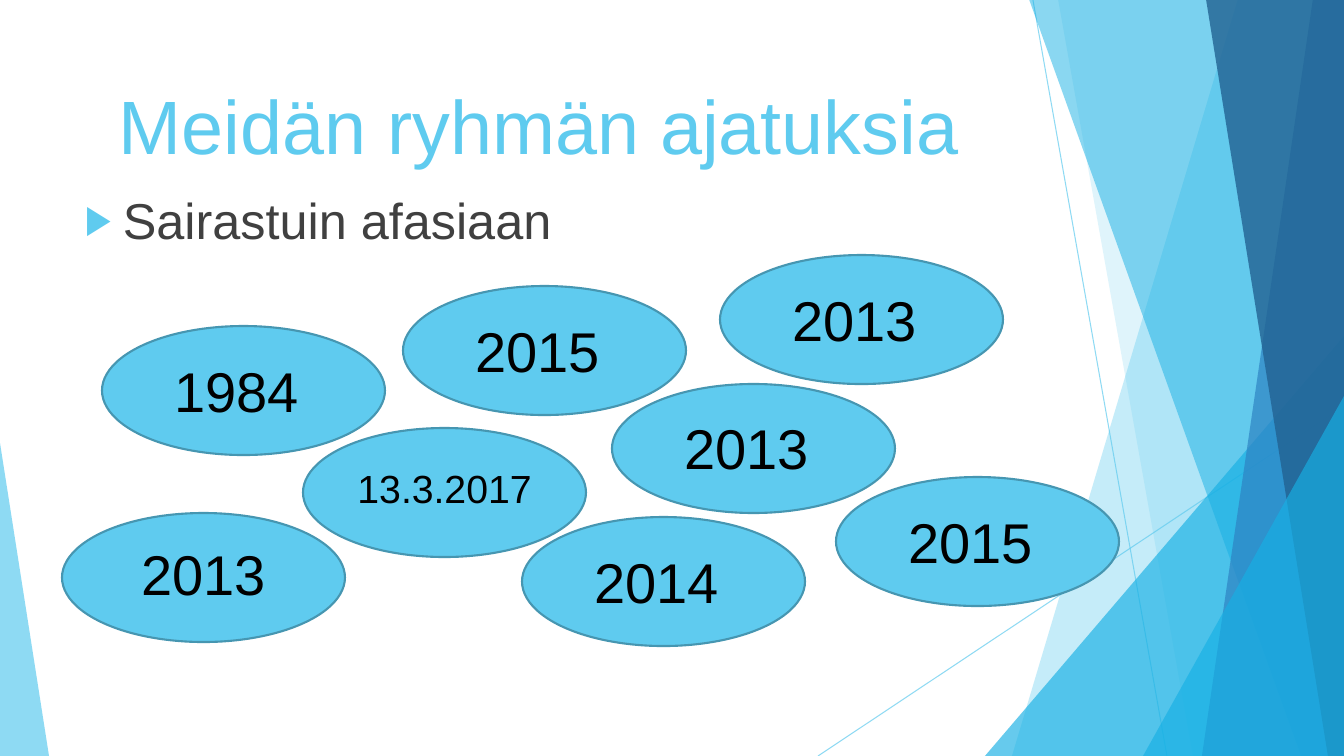
from lxml import etree
from pptx import Presentation
from pptx.dml.color import RGBColor
from pptx.enum.shapes import MSO_CONNECTOR, MSO_SHAPE
from pptx.enum.text import MSO_ANCHOR, PP_ALIGN
from pptx.oxml.ns import qn
from pptx.util import Pt

OVAL = MSO_SHAPE.OVAL
TRIANGLE = MSO_SHAPE.ISOSCELES_TRIANGLE
STRAIGHT = MSO_CONNECTOR.STRAIGHT
TOP = MSO_ANCHOR.TOP
CENTER = PP_ALIGN.CENTER
LEFT = PP_ALIGN.LEFT
WIDTH, HEIGHT = 1344, 756
SCALE = 12192000 / WIDTH
FONT = "Arial"
SKY, AZURE, BLUE, NAVY = "5FCBEF", "17B0E4", "2E83C3", "226292"
OVAL_SIZE = (283, 129)

FACETS = [
    ([(1238, -1), (WIDTH, -1), (WIDTH, HEIGHT), (1012, HEIGHT)], SKY, 36),
    ([(1058, -1), (WIDTH, -1), (WIDTH, HEIGHT), (1193, HEIGHT)], SKY, 20),
    ((985, 336, 359, 420, 1), AZURE, 66),
    ([(1029, -1), (WIDTH, -1), (WIDTH, HEIGHT), (1301, HEIGHT)], AZURE, 50),
    ([(1313, -1), (WIDTH, -1), (WIDTH, HEIGHT), (1202, HEIGHT)], BLUE, 70),
    ([(1206, -1), (WIDTH, -1), (WIDTH, HEIGHT), (1328, HEIGHT)], NAVY, 80),
    ((1143, 396, 201, 360, 1), AZURE, 66),
    ((0, 443, 49, 313, 0), SKY, 70),
]

YEARS = [
    ("1984", 102, 326, 34, 25, 40),
    ("2015", 403, 286, 34, 25, 40),
    ("13.3.2017", 303, 428, 41, 31, 28),
    ("2013", 720, 255, 34, 25, 40),
    ("2013", 612, 384, 34, 25, 40),
    ("2013", 62, 513, 41, 22, 40),
    ("2014", 522, 517, 34, 25, 40),
    ("2015", 836, 477, 34, 25, 40),
]


def px(length):
    return round(length * SCALE)


def color(value):
    return RGBColor.from_string(value)


def set_alpha(fill_format, percent):
    solid = fill_format._xPr.find(qn("a:solidFill"))
    etree.SubElement(solid[0], qn("a:alpha"), val=str(percent * 1000))


def fill_shape(shape, value):
    shape.shadow.inherit = False
    shape.fill.solid()
    shape.fill.fore_color.rgb = color(value)


def add_text(slide, box, text, size, value, align, top_inset=5):
    shape = slide.shapes.add_textbox(*map(px, box))
    frame = shape.text_frame
    frame.word_wrap = True
    frame.vertical_anchor = TOP
    frame.margin_top = px(top_inset)
    paragraph = frame.paragraphs[0]
    paragraph.alignment = align
    run = paragraph.add_run()
    run.text = text
    run.font.name = FONT
    run.font.size = Pt(size)
    run.font.color.rgb = color(value)
    return paragraph


def add_ray(slide, start, end):
    ray = slide.shapes.add_connector(STRAIGHT, *map(px, start + end))
    ray.line.width = Pt(0.75)
    ray.line.fill.solid()
    ray.line.color.rgb = color(SKY)
    set_alpha(ray.line.fill, 70)
    etree.SubElement(ray._element.spPr, qn("a:effectLst"))


def add_facet(slide, outline, value, opacity):
    if isinstance(outline, list):
        points = [(px(x), px(y)) for x, y in outline]
        builder = slide.shapes.build_freeform(*points[0], scale=1.0)
        builder.add_line_segments(points[1:], close=True)
        facet = builder.convert_to_shape()
    else:
        *box, apex = outline
        facet = slide.shapes.add_shape(TRIANGLE, *map(px, box))
        facet.adjustments[0] = apex
    fill_shape(facet, value)
    set_alpha(facet.fill, opacity)
    facet.line.fill.background()


def add_backdrop(slide):
    add_ray(slide, (1033, 0), (1167, HEIGHT))
    add_ray(slide, (WIDTH, 406), (818, HEIGHT))
    for outline, value, opacity in FACETS:
        add_facet(slide, outline, value, opacity)


def add_bullet(paragraph):
    properties = paragraph._p.get_or_add_pPr()
    properties.set("marL", str(px(38)))
    properties.set("indent", str(px(-38)))
    bullet_color = etree.SubElement(properties, qn("a:buClr"))
    etree.SubElement(bullet_color, qn("a:srgbClr"), val=SKY)
    etree.SubElement(properties, qn("a:buSzPct"), val="80000")
    etree.SubElement(properties, qn("a:buFont"), typeface=FONT)
    etree.SubElement(properties, qn("a:buChar"), char="▶")


def add_heading(slide, left, top, width):
    add_text(slide, (left, top, width, 145), "Meidän ryhmän ajatuksia ",
             54, SKY, CENTER, 12)
    paragraph = add_text(slide, (left, top + 112, width, 534),
                         "Sairastuin afasiaan", 36, "404040", LEFT, 10)
    paragraph.space_before = Pt(10)
    add_bullet(paragraph)


def add_year(slide, text, left, top, inset_x, inset_y, size):
    oval = slide.shapes.add_shape(OVAL, *map(px, (left, top) + OVAL_SIZE))
    fill_shape(oval, SKY)
    oval.line.color.rgb = color("4696B1")
    oval.line.width = Pt(1.5)
    height = 78 if size == 40 else 57
    add_text(slide, (left + inset_x, top + inset_y, 201, height),
             text, size, "000000", CENTER)


def main():
    presentation = Presentation()
    presentation.slide_width = px(WIDTH)
    presentation.slide_height = px(HEIGHT)
    slide = presentation.slides.add_slide(presentation.slide_layouts[6])
    add_backdrop(slide)
    add_heading(slide, 75, 67, 948)
    for year in YEARS:
        add_year(slide, *year)
    presentation.save("out.pptx")


if __name__ == "__main__":
    main()
